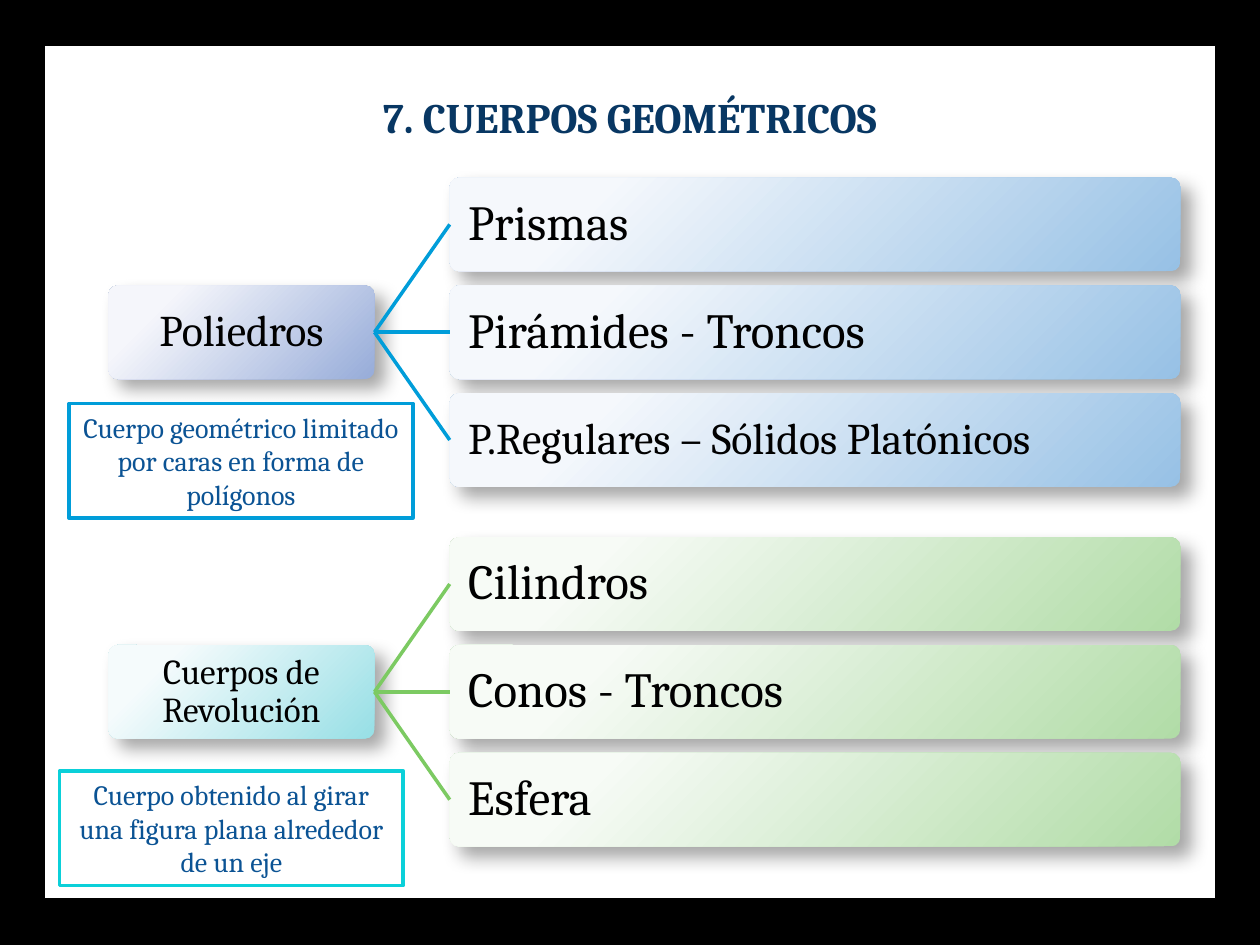
from pptx import Presentation
from pptx.dml.color import RGBColor
from pptx.enum.shapes import MSO_CONNECTOR, MSO_SHAPE
from pptx.enum.text import MSO_ANCHOR, MSO_AUTO_SIZE, PP_ALIGN
from pptx.oxml import parse_xml
from pptx.oxml.ns import nsdecls, qn
from pptx.util import Pt
from lxml.etree import SubElement


def rgb(value):
    return RGBColor.from_string(value)


class Deck:
    """Holds the text style and the current slide, and draws each kind of element."""

    font = "Cambria"
    black = "000000"
    white = "FFFFFF"

    def __init__(self, prs):
        self.s = prs.slides.add_slide(prs.slide_layouts[5])
        self.s.background.fill.solid()
        self.s.background.fill.fore_color.rgb = rgb(self.black)

    def text(self, sp, words, size, color, align=PP_ALIGN.CENTER, bold=False, spacing=1.0):
        tf = sp.text_frame
        tf.word_wrap = True
        tf.vertical_anchor = MSO_ANCHOR.MIDDLE
        p = tf.paragraphs[0]
        p.alignment = align
        p.line_spacing = spacing
        r = p.add_run()
        r.text = words
        r.font.name = self.font
        r.font.size = Pt(size)
        r.font.bold = bold
        r.font.color.rgb = rgb(color)
        return tf

    def shadow(self, sp, alpha, blur, dist):
        sp._element.spPr.append(parse_xml(
            f'<a:effectLst {nsdecls("a")}><a:outerShdw blurRad="{Pt(blur)}" dist="{Pt(dist)}" '
            f'dir="2700000" algn="tl" rotWithShape="0"><a:srgbClr val="{self.black}">'
            f'<a:alpha val="{alpha * 1000}"/></a:srgbClr></a:outerShdw></a:effectLst>'))

    def rect(self, x, y, w, h, line, weight):
        sp = self.s.shapes.add_shape(MSO_SHAPE.RECTANGLE, Pt(x), Pt(y), Pt(w), Pt(h))
        sp.fill.solid()
        sp.fill.fore_color.rgb = rgb(self.white)
        sp.line.color.rgb = rgb(line)
        sp.line.width = Pt(weight)
        return sp

    def frame(self, x, y, w, h):
        sp = self.rect(x, y, w, h, self.black, 0.5)
        self.shadow(sp, 40, 4, 3)
        self.s.shapes._spTree.insert(2, sp._element)

    def title(self, x, y, w, h, words):
        sp = self.s.shapes.title
        sp.left, sp.top, sp.width, sp.height = Pt(x), Pt(y), Pt(w), Pt(h)
        self.text(sp, words, 24, "083763", bold=True)

    def note(self, x, y, words, line):
        sp = self.rect(x, y, 196.5, 65.5, line, 2)
        sp.shadow.inherit = False
        tf = self.text(sp, words, 16, "0B5394")
        tf.auto_size = MSO_AUTO_SIZE.SHAPE_TO_FIT_TEXT

    def node(self, x, y, w, h, words, size, colors, align=PP_ALIGN.CENTER, indent=3):
        sp = self.s.shapes.add_shape(MSO_SHAPE.ROUNDED_RECTANGLE, Pt(x), Pt(y), Pt(w), Pt(h))
        sp.adjustments[0] = 0.1
        sp.line.fill.background()
        light, dark = colors
        sp._element.spPr.find(qn("a:prstGeom")).addnext(parse_xml(
            f'<a:gradFill {nsdecls("a")} rotWithShape="1"><a:gsLst>'
            f'<a:gs pos="20000"><a:srgbClr val="{light}"/></a:gs>'
            f'<a:gs pos="100000"><a:srgbClr val="{dark}"/></a:gs></a:gsLst>'
            '<a:path path="circle"><a:fillToRect l="-15000" t="-15000" r="115000" b="115000"/>'
            '</a:path></a:gradFill>'))
        self.shadow(sp, 35, 10.2, 8)
        tf = self.text(sp, words, size, self.black, align, spacing=0.9)
        tf.margin_left = Pt(indent)
        tf.margin_right = tf.margin_top = tf.margin_bottom = Pt(3)
        return sp

    def link(self, root, leaf, color):
        cn = self.s.shapes.add_connector(MSO_CONNECTOR.STRAIGHT, 0, 0, 0, 0)
        cn.begin_connect(root, 3)
        cn.end_connect(leaf, 1)
        cn.line.color.rgb = rgb(color)
        cn.line.width = Pt(2)
        SubElement(cn._element.spPr, qn("a:effectLst"))

    def tree(self, top, root, root_size, root_colors, leaves, leaf_colors, line):
        height, pitch = 53.5, 61.6
        root_sp = self.node(62, top + pitch, 152, height, root, root_size, root_colors)
        for i, (words, size) in enumerate(leaves):
            leaf = self.node(257, top + i * pitch, 417.5, height, words, size,
                             leaf_colors, PP_ALIGN.LEFT, 9)
            self.link(root_sp, leaf, line)


def main():
    prs = Presentation()
    prs.slide_width, prs.slide_height = Pt(720), Pt(540)
    deck = Deck(prs)
    deck.frame(25.5, 26, 669, 487.5)
    deck.title(28, 48.5, 664, 36, "7. CUERPOS GEOMÉTRICOS")
    deck.tree(101.5, "Poliedros", 25, ("F5F6FB", "97ACD9"),
              [("Prismas", 28), ("Pirámides - Troncos", 28),
               ("P.Regulares – Sólidos Platónicos", 25)],
              ("F5F8FC", "97C1E5"), "009DD9")
    deck.tree(307, "Cuerpos de Revolución", 20, ("F5FBFC", "97DFE5"),
              [("Cilindros", 28), ("Conos - Troncos", 28), ("Esfera", 28)],
              ("F7FBF6", "B1DCA7"), "7CCA62")
    deck.note(34, 440.5, "Cuerpo obtenido al girar una figura plana alrededor de un eje", "0BD0D9")
    deck.note(39.5, 230.5, "Cuerpo geométrico limitado por caras en forma de polígonos", "009DD9")
    prs.save("out.pptx")


if __name__ == "__main__":
    main()
